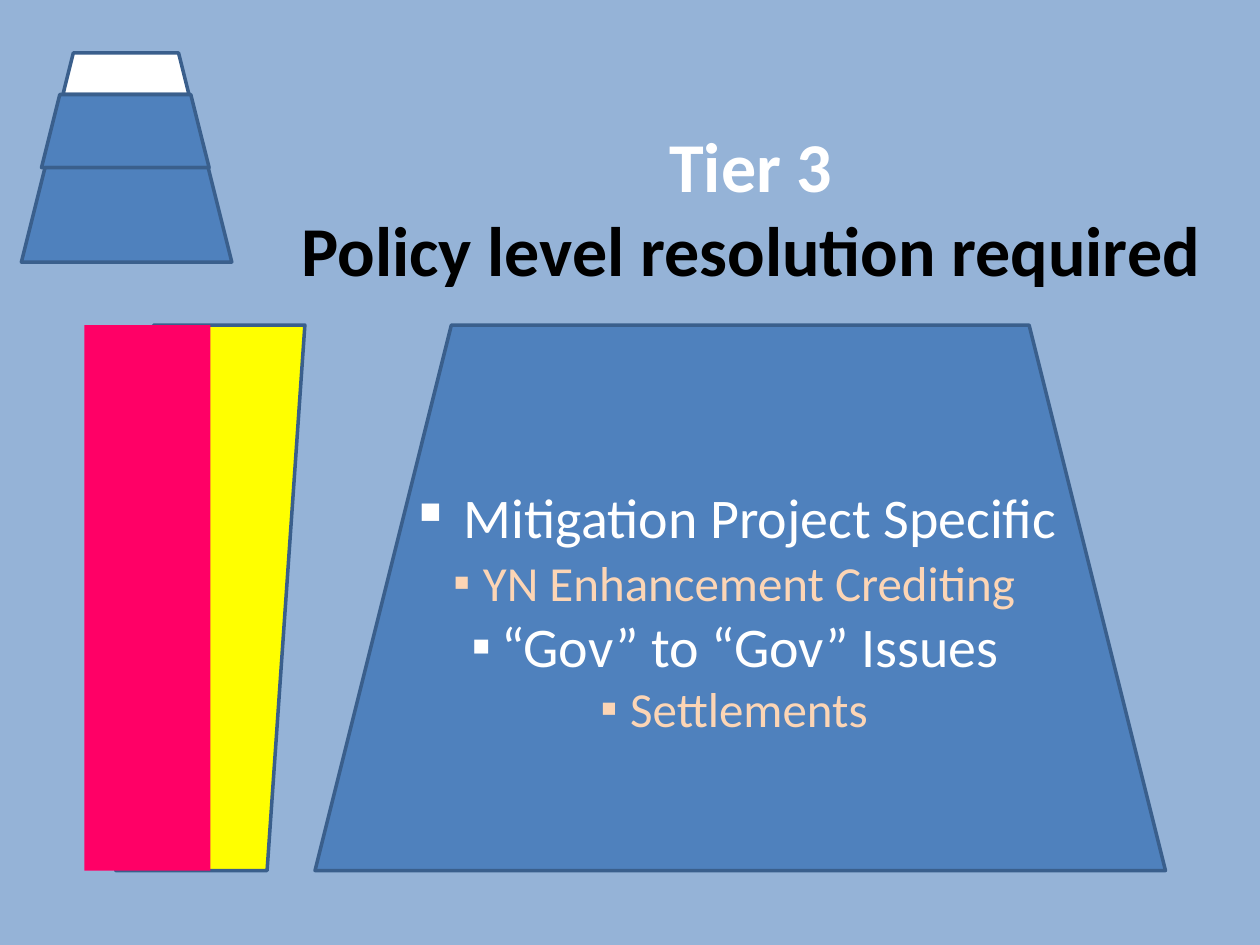
import pptx
import pptx.util
import pptx.dml.color
import pptx.enum.shapes
import pptx.enum.text
import lxml.etree
import pptx.oxml.ns

Inches = pptx.util.Inches
Pt = pptx.util.Pt
RGBColor = pptx.dml.color.RGBColor
MSO_SHAPE = pptx.enum.shapes.MSO_SHAPE
PP_ALIGN = pptx.enum.text.PP_ALIGN
MSO_ANCHOR = pptx.enum.text.MSO_ANCHOR

SKY = RGBColor(0x95, 0xB3, 0xD7)
BLUE = RGBColor(0x4F, 0x81, 0xBD)
OUTLINE = RGBColor(0x3A, 0x5F, 0x8C)
YELLOW = RGBColor(0xFF, 0xFF, 0x00)
PINK = RGBColor(0xFF, 0x00, 0x66)
PEACH = RGBColor(0xFC, 0xD5, 0xB5)
WHITE = RGBColor(0xFF, 0xFF, 0xFF)
BLACK = RGBColor(0x00, 0x00, 0x00)


def add_block(preset, left, top, width, height, fill, outline=OUTLINE):
    block = slide.shapes.add_shape(
        preset, Inches(left), Inches(top), Inches(width), Inches(height))
    block.shadow.inherit = False
    block.fill.solid()
    block.fill.fore_color.rgb = fill
    if outline is None:
        block.line.fill.background()
    else:
        block.line.color.rgb = outline
        block.line.width = Pt(2)
    return block


def add_run(paragraph, text, size, color, bold=False):
    run = paragraph.add_run()
    run.text = text
    run.font.name = "Calibri"
    run.font.size = Pt(size)
    run.font.bold = bold
    run.font.color.rgb = color


presentation = pptx.Presentation()
presentation.slide_width = Inches(10)
presentation.slide_height = Inches(7.5)
slide = presentation.slides.add_slide(presentation.slide_layouts[5])
slide.background.fill.solid()
slide.background.fill.fore_color.rgb = SKY

# Heading
title = slide.shapes.title
title.left, title.top = Inches(2.17), Inches(0.92)
title.width, title.height = Inches(7.58), Inches(1.45)
heading = title.text_frame
heading.word_wrap = True
heading.auto_size = pptx.enum.text.MSO_AUTO_SIZE.NONE
heading.vertical_anchor = MSO_ANCHOR.TOP
for index, (text, color) in enumerate([
        ("Tier 3", WHITE), ("Policy level resolution required", BLACK)]):
    paragraph = heading.paragraphs[0] if index == 0 else heading.add_paragraph()
    paragraph.alignment = PP_ALIGN.CENTER
    add_run(paragraph, text, 40, color, bold=True)

# Issues that belong to this tier
issues_panel = add_block(MSO_SHAPE.TRAPEZOID, 2.5, 2.58, 6.75, 4.33, BLUE)
issues = issues_panel.text_frame
issues.word_wrap = True
issues.vertical_anchor = MSO_ANCHOR.MIDDLE
issues.margin_bottom = Inches(0.43)
for index, (text, size, color) in enumerate([
        ("Mitigation Project Specific", 32, WHITE),
        ("YN Enhancement Crediting", 28, PEACH),
        ("“Gov” to “Gov” Issues", 32, WHITE),
        ("Settlements", 28, PEACH)]):
    paragraph = issues.paragraphs[0] if index == 0 else issues.add_paragraph()
    paragraph.alignment = PP_ALIGN.CENTER
    properties = paragraph._p.get_or_add_pPr()
    lxml.etree.SubElement(properties, pptx.oxml.ns.qn("a:buFont"), typeface="Arial")
    lxml.etree.SubElement(properties, pptx.oxml.ns.qn("a:buChar"), char="▪")
    if index == 0:
        add_run(paragraph, " ", 40, WHITE)
    add_run(paragraph, text, size, color)

# Small pyramid with the current tier in white
for left, top, width, height, fill in [
        (0.5, 0.42, 1, 0.33, WHITE),
        (0.33, 0.75, 1.33, 0.58, BLUE),
        (0.17, 1.33, 1.67, 0.75, BLUE)]:
    add_block(MSO_SHAPE.TRAPEZOID, left, top, width, height, fill)

# Colour bars beside the panel
add_block(MSO_SHAPE.FLOWCHART_DATA, 0.92, 2.58, 1.5, 4.33, YELLOW)
add_block(MSO_SHAPE.RECTANGLE, 0.67, 2.58, 1, 4.33, PINK, outline=None)

presentation.save("out.pptx")
